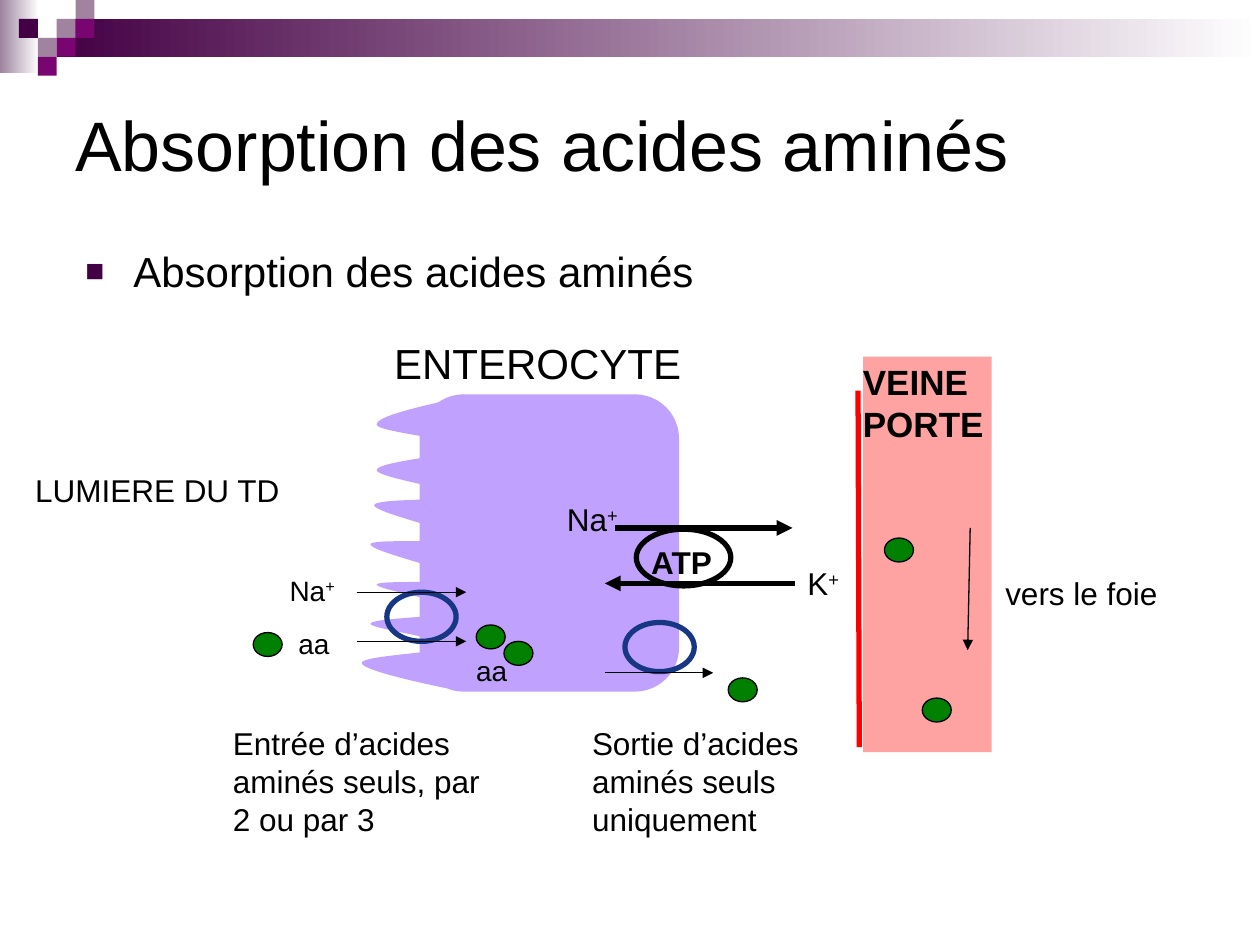
from dataclasses import dataclass

from lxml.etree import SubElement
from pptx import Presentation
from pptx.dml.color import RGBColor
from pptx.enum.shapes import MSO_CONNECTOR, MSO_SHAPE
from pptx.enum.text import MSO_ANCHOR
from pptx.oxml.ns import qn
from pptx.util import Pt

PX = 9144  # 100 px to the inch


@dataclass(frozen=True)
class Theme:
    font: str = "Arial"
    black: str = "000000"
    white: str = "FFFFFF"
    plum: str = "440044"
    magenta: str = "790571"
    mauve: str = "9F839F"
    cell: str = "C0A1FD"
    carrier: str = "173683"
    amino: str = "008000"
    vein: str = "FF6565"
    wall: str = "FF0000"
    title: int = 40
    heading: int = 24
    strong: int = 20
    label: int = 18
    small: int = 16
    thick: float = 3
    thin: float = 0.75


def rgb(value):
    return RGBColor.from_string(value)


class Board:
    def __init__(self, slide, theme):
        self.slide = slide
        self.theme = theme

    def finish(self, sp, fill=None, line=None, width=None):
        sp.shadow.inherit = False
        if fill:
            sp.fill.solid()
            sp.fill.fore_color.rgb = rgb(fill)
        else:
            sp.fill.background()
        if line:
            sp.line.color.rgb = rgb(line)
            sp.line.width = Pt(width)
        else:
            sp.line.fill.background()
        return sp

    def shape(self, kind, box, **style):
        sp = self.slide.shapes.add_shape(kind, *(v * PX for v in box))
        return self.finish(sp, **style)

    def gradient(self, box, start, end):
        sp = self.shape(MSO_SHAPE.RECTANGLE, box)
        sp.fill.gradient()
        sp.fill.gradient_angle = 0
        for stop, color, position in zip(sp.fill.gradient_stops, (start, end), (0, 1)):
            stop.color.rgb = rgb(color)
            stop.position = position

    def curve(self, start, curves, fill):
        """Add a filled chain of cubic curves, each given as (control, control, end)."""
        ends = [c[-1] for c in curves]
        builder = self.slide.shapes.build_freeform(*start, scale=PX)
        builder.add_line_segments(ends, close=False)
        sp = self.finish(builder.convert_to_shape(), fill)
        left, top = (min(axis) for axis in zip(start, *ends))
        segments = list(sp.element.spPr.iter(qn("a:lnTo")))
        for segment, points in zip(segments, curves):
            cubic = SubElement(segment.getparent(), qn("a:cubicBezTo"))
            for x, y in points:
                SubElement(cubic, qn("a:pt"), x=str(x - left), y=str(y - top))
            segment.getparent().replace(segment, cubic)

    def line(self, start, end, color, width, arrow=True):
        c = self.slide.shapes.add_connector(
            MSO_CONNECTOR.STRAIGHT, *(v * PX for v in start + end))
        c.line.color.rgb = rgb(color)
        c.line.width = Pt(width)
        props = c.element.spPr
        if arrow:
            SubElement(props.find(qn("a:ln")), qn("a:tailEnd"), type="triangle")
        SubElement(props, qn("a:effectLst"))

    def text(self, box, text, size, bold=False, sup="", wrap=False,
             anchor=MSO_ANCHOR.TOP, fill=None):
        """Add a text box, one paragraph per line, with an optional superscript."""
        sp = self.slide.shapes.add_textbox(*(v * PX for v in box))
        if fill:
            sp.fill.solid()
            sp.fill.fore_color.rgb = rgb(fill)
        tf = sp.text_frame
        tf.word_wrap = wrap
        tf.vertical_anchor = anchor
        tf.text = text
        if sup:
            r = tf.paragraphs[0].add_run()
            r.text = sup
            r._r.get_or_add_rPr().set("baseline", "30000")
        values = {"name": self.theme.font, "size": Pt(size), "bold": bold}
        for p in tf.paragraphs:
            for r in p.runs:
                for name, value in values.items():
                    setattr(r.font, name, value)
                r.font.color.rgb = rgb(self.theme.black)
        return sp

    def bullet(self, box, text, size):
        p = self.text(box, text, size, wrap=True).text_frame.paragraphs[0]
        p.space_before = Pt(5.5)
        props = p._p.get_or_add_pPr()
        props.set("marL", str(38 * PX))
        props.set("indent", str(-38 * PX))
        SubElement(SubElement(props, qn("a:buClr")), qn("a:srgbClr"), val=self.theme.plum)
        SubElement(props, qn("a:buSzPct"), val="75000")
        SubElement(props, qn("a:buFont"), typeface=self.theme.font)
        SubElement(props, qn("a:buChar"), char="■")


def draw_banner(board):
    t = board.theme
    board.gradient((0, 0, 31, 58), t.mauve, t.white)
    board.gradient((45, 15, 955, 30), t.plum, t.white)
    side = 15
    tiles = [(3, 1, t.mauve), (4, 0, t.mauve), (4, 1, t.magenta), (2, 2, t.mauve),
             (1, 1, t.plum), (3, 2, t.magenta), (2, 3, t.magenta)]
    for column, row, color in tiles:
        board.shape(MSO_SHAPE.RECTANGLE, (column * side, row * side, side, side), fill=color)


def draw_cell_and_vein(board):
    t = board.theme
    villi = [
        ((320, 539), (287, 531), (287, 526)), ((288, 520), (355, 518), (356, 513)),
        ((357, 507), (293, 499), (294, 495)), ((295, 490), (364, 490), (364, 484)),
        ((365, 479), (299, 468), (299, 464)), ((299, 460), (365, 464), (364, 459)),
        ((363, 453), (294, 438), (294, 432)), ((294, 427), (364, 432), (364, 427)),
        ((365, 422), (297, 407), (297, 401)), ((297, 395), (365, 398), (365, 393)),
        ((365, 389), (298, 379), (299, 373)), ((299, 366), (368, 361), (368, 355)),
        ((368, 349), (299, 343), (299, 337)), ((299, 330), (333, 323), (366, 315)),
    ]
    board.curve((353, 546), villi, t.cell)
    board.line((681, 310), (682, 593), t.wall, t.thick, arrow=False)
    vein = board.shape(MSO_SHAPE.RECTANGLE, (685, 283, 102, 314), fill=t.vein)
    color = vein.element.spPr.find(qn("a:solidFill")).find(qn("a:srgbClr"))
    SubElement(color, qn("a:alpha"), val="60000")
    body = board.shape(MSO_SHAPE.ROUNDED_RECTANGLE, (333, 313, 206, 236), fill=t.cell)
    body.adjustments[0] = 0.17


def draw_transport(board):
    t = board.theme
    board.shape(MSO_SHAPE.OVAL, (505, 420, 75, 45), line=t.black, width=t.thick)
    for left, top in [(307, 470), (496, 494)]:
        board.shape(MSO_SHAPE.OVAL, (left, top, 55, 39), line=t.carrier, width=t.thick)
    for start, end, width in [
        ((631, 463), (480, 463), t.thick),
        ((488, 419), (629, 419), t.thick),
        ((283, 470), (370, 470), t.thin),
        ((283, 509), (370, 509), t.thin),
        ((480, 534), (566, 534), t.thin),
        ((770, 419), (768, 516), t.thin),
    ]:
        board.line(start, end, t.black, width)
    for left, top in [(201, 502), (378, 496), (400, 509), (578, 538), (702, 427), (732, 554)]:
        board.shape(MSO_SHAPE.OVAL, (left, top, 23, 19), fill=t.amino, line=t.black, width=t.thin)


def draw_labels(board):
    t = board.theme
    board.text((631, 443, 47, 40), "K", t.label, sup="+")
    board.text((440, 392, 62, 40), "Na", t.label, sup="+")
    board.text((507, 426, 70, 40), "ATP", t.label, bold=True)
    board.text((220, 450, 57, 37), "Na", t.small, sup="+")
    for left, top in [(227, 492), (368, 514)]:
        board.text((left, top, 45, 37), "aa", t.small)
    board.text((18, 369, 215, 40), "LUMIERE DU TD", t.label)
    board.text((675, 281, 143, 77), "VEINE\nPORTE", t.strong, bold=True, wrap=True)
    board.text((303, 263, 248, 50), "ENTEROCYTE", t.heading)
    board.text((788, 451, 141, 40), "vers le foie", t.label, fill=t.white)
    for left, caption in [(175, "Entrée d’acides aminés seuls, par 2 ou par 3"),
                          (460, "Sortie d’acides aminés seuls uniquement")]:
        board.text((left, 570, 228, 101), caption, t.label, wrap=True)


def main():
    prs = Presentation()
    prs.slide_width, prs.slide_height = 1000 * PX, 750 * PX
    s = prs.slides.add_slide(prs.slide_layouts[6])
    board = Board(s, Theme())
    heading = "Absorption des acides aminés"
    draw_banner(board)
    board.text((50, 39, 900, 150), heading, board.theme.title, wrap=True,
               anchor=MSO_ANCHOR.MIDDLE)
    board.bullet((58, 190, 893, 425), heading, board.theme.heading)
    draw_cell_and_vein(board)
    draw_transport(board)
    draw_labels(board)
    prs.save("out.pptx")


if __name__ == "__main__":
    main()
